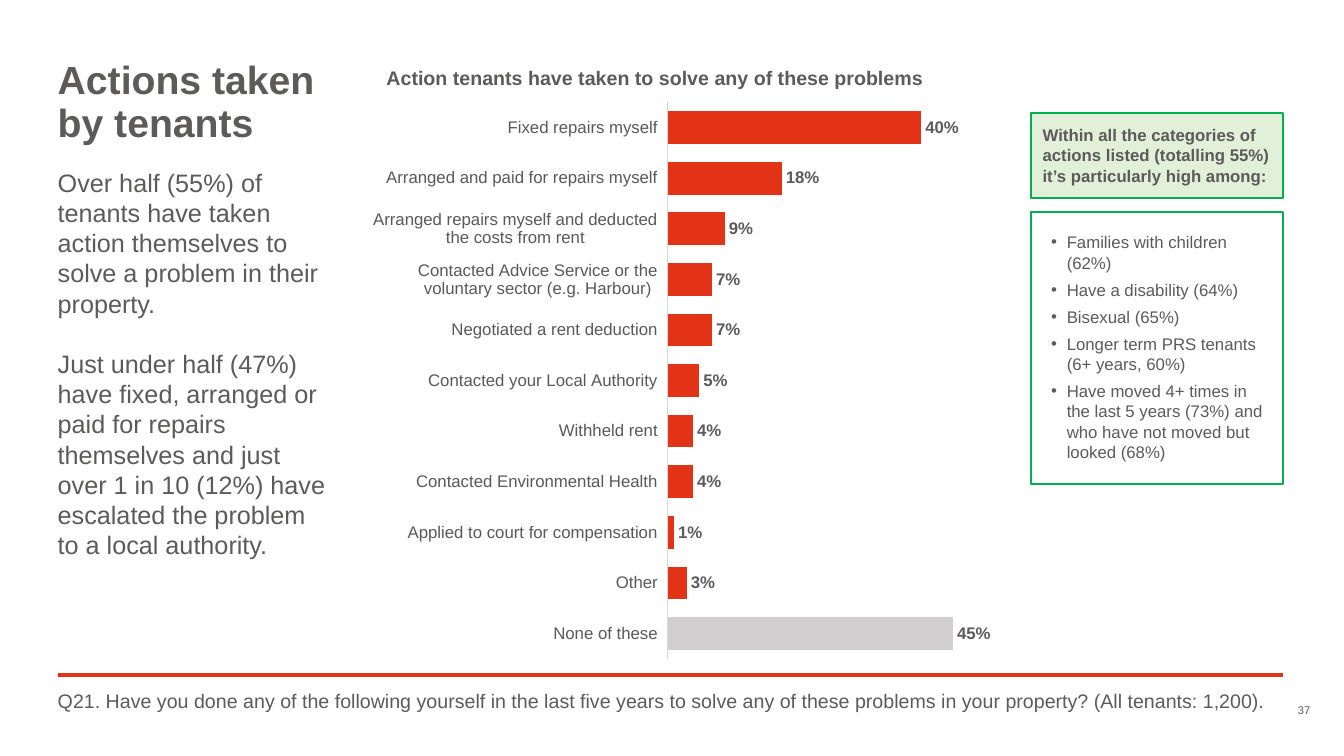
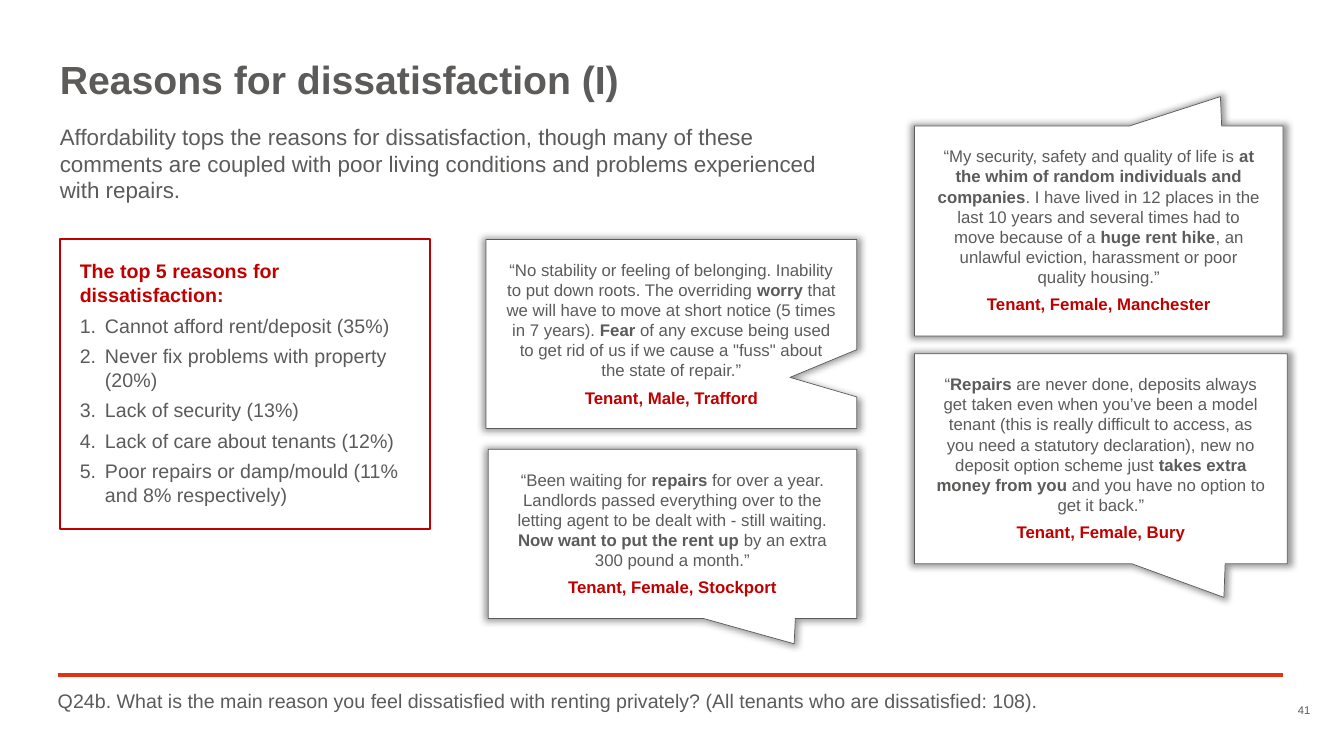
from dataclasses import dataclass

from lxml.etree import SubElement
from pptx import Presentation
from pptx.chart.data import CategoryChartData
from pptx.dml.color import RGBColor
from pptx.enum.chart import XL_CHART_TYPE as ChartType
from pptx.enum.chart import XL_LABEL_POSITION as LabelPosition
from pptx.enum.chart import XL_TICK_LABEL_POSITION as TickLabels
from pptx.enum.chart import XL_TICK_MARK as TickMark
from pptx.enum.shapes import MSO_CONNECTOR as Connector
from pptx.enum.shapes import MSO_SHAPE as Shape
from pptx.enum.text import MSO_ANCHOR as Anchor
from pptx.enum.text import PP_ALIGN as Align
from pptx.oxml.ns import qn
from pptx.util import Pt

PX = 9525


@dataclass(frozen=True)
class Theme:
    font: str = "Arial"
    ink: str = "5C5B5A"
    axis_ink: str = "595959"
    axis_line: str = "D9D9D9"
    red: str = "E33317"
    dark_red: str = "C00000"
    green: str = "00B050"
    pale_green: str = "E2F0D9"
    grey: str = "D0CECE"
    white: str = "FFFFFF"
    shadow: str = "000000"
    title: int = 28
    body: int = 18
    lead: int = 16
    heading: int = 14
    small: int = 12
    number: int = 8


@dataclass(frozen=True)
class Box:
    left: int
    top: int
    width: int
    height: int

    def within(self, left, top, width, height):
        return Box(self.left + left, self.top + top, width, height)

    def emu(self):
        return [PX * n for n in (self.left, self.top, self.width, self.height)]


THEME = Theme()
MARGIN = 55
RIGHT = 1222
RULE_TOP = 643

ACTIONS = [
    ("None of these", 0.45),
    ("Other", 0.03),
    ("Applied to court for compensation", 0.01),
    ("Contacted Environmental Health", 0.04),
    ("Withheld rent", 0.04),
    ("Contacted your Local Authority", 0.05),
    ("Negotiated a rent deduction", 0.07),
    ("Contacted Advice Service or the voluntary sector (e.g. Harbour)", 0.07),
    ("Arranged repairs myself and deducted the costs from rent", 0.09),
    ("Arranged and paid for repairs myself", 0.18),
    ("Fixed repairs myself", 0.4),
]

GROUPS = [
    "Families with children (62%)",
    "Have a disability (64%)",
    "Bisexual (65%)",
    "Longer term PRS tenants (6+ years, 60%)",
    "Have moved 4+ times in the last 5 years (73%) and who have not moved but looked (68%)",
]

REASONS = [
    "Cannot afford rent/deposit (35%)",
    "Never fix problems with property (20%)",
    "Lack of security (13%)",
    "Lack of care about tenants (12%)",
    "Poor repairs or damp/mould (11% and 8% respectively)",
]

QUOTES = [
    (Box(463, 228, 353, 180), (0.32, 0.23), "Tenant, Male, Trafford",
     "“No stability or feeling of belonging. Inability to put down roots. The overriding "
     "*worry* that we will have to move at short notice (5 times in 7 years). *Fear* of any "
     "excuse being used to get rid of us if we cause a \"fuss\" about the state of repair.”"),
    (Box(465, 428, 351, 161), (0.33, 0.65), "Tenant, Female, Stockport",
     "“Been waiting for *repairs* for over a year. Landlords passed everything over to the "
     "letting agent to be dealt with - still waiting. *Now want to put the rent up *by an "
     "extra 300 pound a month.”"),
    (Box(871, 120, 351, 200), (0.33, -0.64), "Tenant, Female, Manchester",
     "“My security, safety and quality of life is *at the whim of random individuals and "
     "companies*. I have lived in 12 places in the last 10 years and several times had to "
     "move because of a *huge rent hike*, an unlawful eviction, harassment or poor quality "
     "housing.”"),
    (Box(871, 337, 355, 200), (0.33, 0.66), "Tenant, Female, Bury",
     "“*Repairs* are never done, deposits always get taken even when you’ve been a model "
     "tenant (this is really difficult to access, as you need a statutory declaration), new "
     "no deposit option scheme just *takes extra money from you *and you have no option to "
     "get it back.”"),
]


def style_font(font, size, color=THEME.ink, bold=False):
    font.name = THEME.font
    font.size = Pt(size)
    font.bold = bold
    font.color.rgb = RGBColor.from_string(color)


def add_para(frame, text, size, color=THEME.ink, bold=False, align=Align.LEFT,
             after=0, line=1.0, indent=0, bullet=None):
    first = frame.paragraphs[0]
    para = frame.add_paragraph() if first.runs else first
    para.alignment = align
    para.space_after = Pt(after)
    para.line_spacing = line
    for index, words in enumerate(text.split("*")):
        span = para.add_run()
        span.text = words
        style_font(span.font, size, color, bold or index % 2 == 1)
    if bullet:
        props = para._p.get_or_add_pPr()
        props.set("marL", str(indent * PX))
        props.set("indent", str(-indent * PX))
        SubElement(props, qn("a:buFont"), typeface=THEME.font)
        if bullet == "number":
            SubElement(props, qn("a:buAutoNum"), type="arabicPeriod")
        else:
            SubElement(props, qn("a:buChar"), char=bullet)


def prepare_frame(frame, inset=0, anchor=Anchor.TOP):
    frame.word_wrap = True
    frame.vertical_anchor = anchor
    frame.margin_left = frame.margin_right = inset * PX
    frame.margin_top = frame.margin_bottom = inset * PX
    return frame


def add_text(page, box, text, size, anchor=Anchor.TOP, **style):
    frame = prepare_frame(page.shapes.add_textbox(*box.emu()).text_frame, anchor=anchor)
    add_para(frame, text, size, **style)
    return frame


def add_panel(page, box, line, kind=Shape.RECTANGLE, fill=None, weight=1.5, inset=19):
    panel = page.shapes.add_shape(kind, *box.emu())
    panel.shadow.inherit = False
    if fill:
        panel.fill.solid()
        panel.fill.fore_color.rgb = RGBColor.from_string(fill)
    else:
        panel.fill.background()
    panel.line.color.rgb = RGBColor.from_string(line)
    panel.line.width = Pt(weight)
    prepare_frame(panel.text_frame, inset)
    return panel


def add_page(deck, title, title_box, question, number):
    page = deck.slides.add_slide(deck.slide_layouts[6])
    add_text(page, Box(1211, 671, 37, 12), number, THEME.number,
             anchor=Anchor.BOTTOM, align=Align.RIGHT)
    rule = page.shapes.add_connector(
        Connector.STRAIGHT, MARGIN * PX, RULE_TOP * PX, RIGHT * PX, RULE_TOP * PX)
    rule.line.color.rgb = RGBColor.from_string(THEME.red)
    rule.line.width = Pt(3)
    SubElement(rule.element.spPr, qn("a:effectLst"))
    add_text(page, title_box, title, THEME.title, bold=True, line=0.9)
    add_text(page, Box(MARGIN, 659, RIGHT - MARGIN, 31), question, THEME.heading, line=0.9)
    return page


def set_plot_area(chart, **fractions):
    area = chart.element.find(".//" + qn("c:plotArea"))
    for old in area.findall(qn("c:layout")):
        area.remove(old)
    layout = SubElement(area, qn("c:layout"))
    area.insert(0, layout)
    manual = SubElement(layout, qn("c:manualLayout"))
    SubElement(manual, qn("c:layoutTarget"), val="inner")
    for axis in "xy":
        SubElement(manual, qn(f"c:{axis}Mode"), val="edge")
    for name, value in fractions.items():
        SubElement(manual, qn(f"c:{name}"), val=str(value))


def add_actions_chart(page, box):
    add_text(page, box.within(15, 0, 682, 23),
             "Action tenants have taken to solve any of these problems",
             THEME.heading, bold=True)
    data = CategoryChartData(number_format="0%")
    data.categories = [name for name, _ in ACTIONS]
    data.add_series("Series 1", [value for _, value in ACTIONS])
    chart = page.shapes.add_chart(
        ChartType.BAR_CLUSTERED, *box.within(0, 34, box.width, box.height - 34).emu(), data).chart
    chart.has_legend = False
    chart.has_title = False
    style_font(chart.font, THEME.small)
    set_plot_area(chart, x=0.45, y=0, w=0.48, h=1)

    names = chart.category_axis
    names.major_tick_mark = TickMark.NONE
    names.tick_label_position = TickLabels.LOW
    names.format.line.color.rgb = RGBColor.from_string(THEME.axis_line)
    names.format.line.width = Pt(0.75)
    style_font(names.tick_labels.font, THEME.small, THEME.axis_ink)
    scale = chart.value_axis
    scale.minimum_scale = 0
    scale.maximum_scale = 0.5
    scale.has_major_gridlines = False
    scale.visible = False

    plot = chart.plots[0]
    plot.gap_width = 55
    plot.vary_by_categories = False
    plot.has_data_labels = True
    labels = plot.data_labels
    labels.show_value = True
    labels.number_format = "0%"
    labels.number_format_is_linked = False
    labels.position = LabelPosition.OUTSIDE_END
    style_font(labels.font, THEME.small, bold=True)
    bars = plot.series[0]
    for fill, color in ((bars.format.fill, THEME.red),
                        (bars.points[0].format.fill, THEME.grey)):
        fill.solid()
        fill.fore_color.rgb = RGBColor.from_string(color)


def add_groups(page, box):
    head = add_panel(page, box.within(0, 0, box.width, 81), THEME.green,
                     fill=THEME.pale_green, inset=11)
    add_para(head.text_frame,
             "Within all the categories of actions listed (totalling 55%) "
             "it’s particularly high among:", THEME.small, bold=True)
    body = add_panel(page, box.within(0, 94, box.width, box.height - 94), THEME.green)
    for group in GROUPS:
        add_para(body.text_frame, group, THEME.small, after=5, indent=15, bullet="•")


def add_reasons(page, box):
    frame = add_panel(page, box, THEME.dark_red).text_frame
    add_para(frame, "The top 5 reasons for dissatisfaction:", THEME.heading,
             color=THEME.dark_red, bold=True, after=5)
    for reason in REASONS:
        add_para(frame, reason, THEME.heading, after=5, indent=24, bullet="number")


def add_quote(page, box, tip, speaker, words):
    callout = add_panel(page, box, THEME.ink, kind=Shape.RECTANGULAR_CALLOUT,
                        fill=THEME.white, weight=0.5)
    callout.adjustments[0], callout.adjustments[1] = tip
    effects = callout.element.spPr.find(qn("a:effectLst"))
    shadow = SubElement(effects, qn("a:outerShdw"), blurRad="63500", sx="102000",
                        sy="102000", algn="ctr", rotWithShape="0")
    tint = SubElement(shadow, qn("a:srgbClr"), val=THEME.shadow)
    SubElement(tint, qn("a:alpha"), val="40000")
    add_para(callout.text_frame, words, THEME.small, align=Align.CENTER, after=5)
    add_para(callout.text_frame, speaker, THEME.small, color=THEME.dark_red,
             bold=True, align=Align.CENTER, after=5)


def add_actions_page(deck):
    page = add_page(
        deck, "Actions taken by tenants", Box(MARGIN, 58, 280, 82),
        "Q21. Have you done any of the following yourself in the last five years to solve "
        "any of these problems in your property? (All tenants: 1,200).", "37")
    story = add_text(
        page, Box(MARGIN, 159, 257, 378),
        "Over half (55%) of tenants have taken action themselves to solve a problem in "
        "their property.", THEME.body, after=21.5)
    add_para(story, "Just under half (47%) have fixed, arranged or paid for repairs "
             "themselves and just over 1 in 10 (12%) have escalated the problem to a "
             "local authority.", THEME.body)
    add_actions_chart(page, Box(353, 63, 629, 565))
    add_groups(page, Box(982, 108, 240, 353))


def add_reasons_page(deck):
    page = add_page(
        deck, "Reasons for dissatisfaction (I)", Box(57, 58, 1165, 56),
        "Q24b. What is the main reason you feel dissatisfied with renting privately? "
        "(All tenants who are dissatisfied: 108).", "41")
    add_text(page, Box(57, 117, 761, 78),
             "Affordability tops the reasons for dissatisfaction, though many of these "
             "comments are coupled with poor living conditions and problems experienced "
             "with repairs.", THEME.lead)
    add_reasons(page, Box(57, 228, 353, 276))
    for quote in QUOTES:
        add_quote(page, *quote)


def main():
    deck = Presentation()
    deck.slide_width, deck.slide_height = 1280 * PX, 720 * PX
    add_actions_page(deck)
    add_reasons_page(deck)
    deck.save("out.pptx")


if __name__ == "__main__":
    main()
